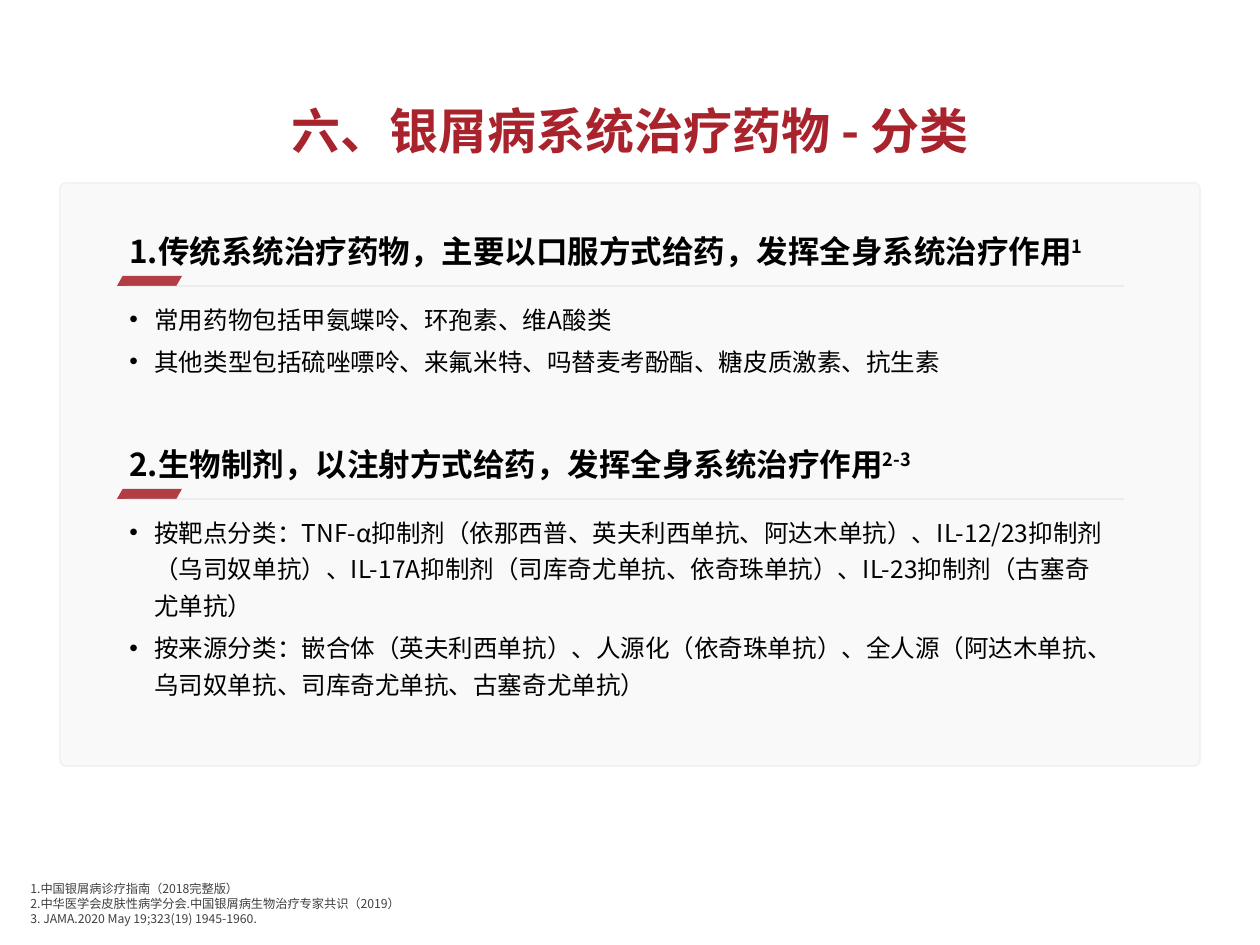
from lxml import etree
from pptx import Presentation
from pptx.dml.color import RGBColor
from pptx.enum.shapes import MSO_CONNECTOR, MSO_SHAPE
from pptx.enum.text import MSO_ANCHOR, PP_ALIGN
from pptx.oxml.ns import qn
from pptx.util import Emu, Pt

PX = 914400 // 126
FONT = "Noto Sans CJK SC"
RED = RGBColor(0xA9, 0x23, 0x2D)
BLACK = RGBColor(0, 0, 0)
DARK = RGBColor(0x40, 0x40, 0x40)
PANEL = RGBColor(0xF9, 0xF9, 0xF9)
PANEL_EDGE = RGBColor(0xF2, 0xF2, 0xF2)
RULE = RGBColor(0xBF, 0xBF, 0xBF)

ROUNDED = MSO_SHAPE.ROUNDED_RECTANGLE
PARALLELOGRAM = MSO_SHAPE.PARALLELOGRAM
STRAIGHT = MSO_CONNECTOR.STRAIGHT
CENTER = PP_ALIGN.CENTER
TOP, MIDDLE, BOTTOM = MSO_ANCHOR.TOP, MSO_ANCHOR.MIDDLE, MSO_ANCHOR.BOTTOM

TITLE_FONT = {"size": Pt(28), "bold": True}
HEADING_FONT = {"size": Pt(18), "bold": True}
LIST_FONT = {"size": Pt(14)}
SOURCE_FONT = {"size": Pt(7)}

SECTION_TOP = 216
SECTION_STEP = 213
SECTIONS = [
    ("1.传统系统治疗药物，主要以口服方式给药，发挥全身系统治疗作用", "1", 876, 92, [
        "常用药物包括甲氨蝶呤、环孢素、维A酸类",
        "其他类型包括硫唑嘌呤、来氟米特、吗替麦考酚酯、糖皮质激素、抗生素",
    ]),
    ("2.生物制剂，以注射方式给药，发挥全身系统治疗作用", "2-3", 998, 173, [
        "按靶点分类：TNF-α抑制剂（依那西普、英夫利西单抗、阿达木单抗）、IL-12/23抑制剂"
        "（乌司奴单抗）、IL-17A抑制剂（司库奇尤单抗、依奇珠单抗）、IL-23抑制剂（古塞奇尤单抗）",
        "按来源分类：嵌合体（英夫利西单抗）、人源化（依奇珠单抗）、全人源"
        "（阿达木单抗、乌司奴单抗、司库奇尤单抗、古塞奇尤单抗）",
    ]),
]
SOURCES = [
    "1.中国银屑病诊疗指南（2018完整版）",
    "2.中华医学会皮肤性病学分会.中国银屑病生物治疗专家共识（2019）",
    "3. JAMA.2020 May 19;323(19) 1945-1960.",
]


def px(*lengths):
    return [Emu(n * PX) for n in lengths]


def set_alpha(fill, percent):
    color = fill._xPr.find(qn("a:solidFill"))[0]
    etree.SubElement(color, qn("a:alpha")).set("val", str(percent * 1000))


def add_run(p, text, font, color):
    r = p.add_run()
    r.text = text
    for name, value in font.items():
        setattr(r.font, name, value)
    r.font.color.rgb = color
    r.font.name = FONT
    etree.SubElement(r.font._element, qn("a:ea")).set("typeface", FONT)
    return r


def add_bullet(p, indent):
    pPr = p._p.get_or_add_pPr()
    pPr.set("marL", str(indent * PX))
    pPr.set("indent", str(-indent * PX))
    etree.SubElement(pPr, qn("a:buFont")).set("typeface", "Arial")
    etree.SubElement(pPr, qn("a:buChar")).set("char", "•")


def add_text(slide, box, lines, font, color, anchor=TOP, fmt=None, gap=0, bullet=False):
    tf = slide.shapes.add_textbox(*px(*box)).text_frame
    tf.word_wrap = True
    tf.vertical_anchor = anchor
    for i, line in enumerate(lines):
        p = tf.add_paragraph() if i else tf.paragraphs[0]
        for name, value in (fmt or {}).items():
            setattr(p, name, value)
        if i and gap:
            p.space_before = Pt(gap)
        if bullet:
            add_bullet(p, 25)
        add_run(p, line, font, color)
    return tf


def add_shape(slide, kind, box, adjustment, color):
    s = slide.shapes.add_shape(kind, *px(*box))
    s.shadow.inherit = False
    s.adjustments[0] = adjustment
    s.fill.solid()
    s.fill.fore_color.rgb = color
    s.line.fill.background()
    return s


def add_panel(slide):
    s = add_shape(slide, ROUNDED, (60, 183, 1140, 583), 0.01, PANEL)
    s.line.color.rgb = PANEL_EDGE
    s.line.width = Pt(1)


def add_divider(slide, y):
    accent = add_shape(slide, PARALLELOGRAM, (117, y - 10, 65, 10), 0.56, RED)
    set_alpha(accent.fill, 88)
    rule = slide.shapes.add_connector(STRAIGHT, *px(126, y, 1124, y))
    rule.line.color.rgb = RULE
    rule.line.width = Pt(0.5)
    set_alpha(rule.line.fill, 61)
    etree.SubElement(rule._element.spPr, qn("a:effectLst"))


def add_section(slide, top, heading, mark, list_width, list_height, items):
    spacing = {"line_spacing": 1.25}
    add_divider(slide, top + 70)
    tf = add_text(slide, (117, top, 1027, 57), [heading], HEADING_FONT, BLACK, fmt=spacing)
    r = add_run(tf.paragraphs[0], mark, HEADING_FONT, BLACK)
    r.font._element.set("baseline", "30000")
    add_text(slide, (117, top + 75, list_width, list_height), items, LIST_FONT, BLACK,
             fmt=spacing, gap=3, bullet=True)


def main():
    prs = Presentation()
    prs.slide_width, prs.slide_height = px(1260, 945)
    slide = prs.slides.add_slide(prs.slide_layouts[6])
    add_text(slide, (87, 86, 1086, 96), ["六、银屑病系统治疗药物 - 分类"], TITLE_FONT, RED,
             MIDDLE, {"alignment": CENTER, "line_spacing": 0.9})
    add_text(slide, (18, 869, 1182, 63), SOURCES, SOURCE_FONT, DARK, BOTTOM)
    add_panel(slide)
    for i, section in enumerate(SECTIONS):
        add_section(slide, SECTION_TOP + i * SECTION_STEP, *section)
    prs.save("out.pptx")


if __name__ == "__main__":
    main()
